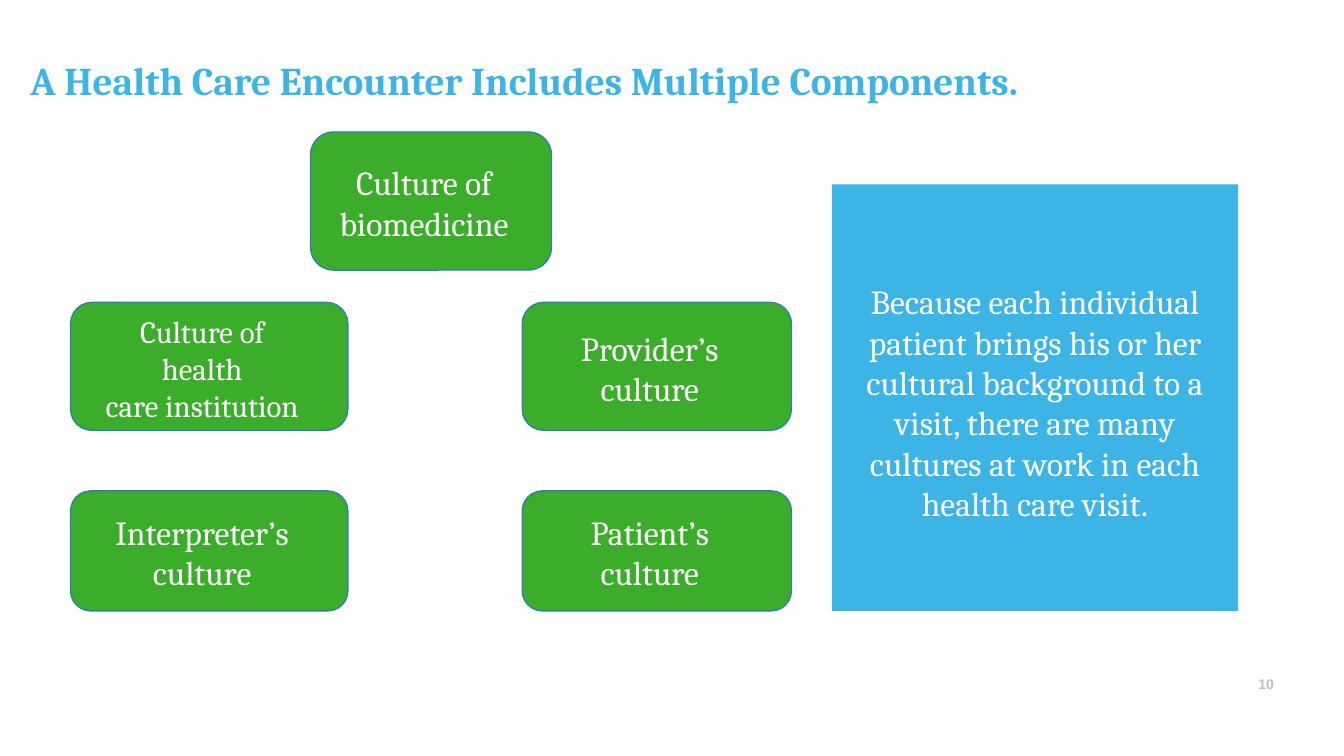
from dataclasses import dataclass

from pptx import Presentation
from pptx.dml.color import RGBColor as RGB
from pptx.enum.shapes import MSO_SHAPE as Shape
from pptx.enum.text import MSO_ANCHOR as Anchor, MSO_AUTO_SIZE as Fit, PP_ALIGN as Align
from pptx.util import Inches, Pt


@dataclass(frozen=True)
class Theme:
    sky: RGB = RGB(0x3C, 0xB5, 0xE6)
    leaf: RGB = RGB(0x3C, 0xAD, 0x2B)
    edge: RGB = RGB(0x2A, 0x84, 0xA9)
    white: RGB = RGB(0xFF, 0xFF, 0xFF)
    gray: RGB = RGB(0xBE, 0xBE, 0xBE)
    serif: str = "Cambria"
    sans: str = "Arial"
    head: int = 28
    body: int = 24
    snug: int = 22
    foot: int = 10
    cell: float = 0.1


class Deck:
    def __init__(self, theme):
        self.theme = theme
        self.show = Presentation()
        self.show.slide_width = Inches(13.33)
        self.show.slide_height = Inches(7.5)
        self.slide = self.show.slides.add_slide(self.show.slide_layouts[5])

    def grid(self, *spans):
        return [Inches(span * self.theme.cell) for span in spans]

    def label(self, shape, text, size, color, pads=(0, 0, 0, 0), align=Align.CENTER,
              anchor=Anchor.MIDDLE, face=None, bold=False):
        frame = shape.text_frame
        frame.text = text
        frame.word_wrap = True
        frame.auto_size = Fit.NONE
        frame.vertical_anchor = anchor
        (frame.margin_left, frame.margin_top,
         frame.margin_right, frame.margin_bottom) = self.grid(*pads)
        for para in frame.paragraphs:
            para.alignment = align
            for run in para.runs:
                run.font.name = face or self.theme.serif
                run.font.size = Pt(size)
                run.font.bold = bold
                run.font.color.rgb = color

    def title(self, text, left, top, width, height):
        shape = self.slide.shapes.title
        shape.left, shape.top, shape.width, shape.height = self.grid(left, top, width, height)
        self.label(shape, text, self.theme.head, self.theme.sky, (0.1, 0.2, 0, 0),
                   Align.LEFT, Anchor.TOP, bold=True)

    def block(self, kind, spot, fill):
        shape = self.slide.shapes.add_shape(kind, *self.grid(*spot))
        shape.shadow.inherit = False
        shape.fill.solid()
        shape.fill.fore_color.rgb = fill
        shape.line.fill.background()
        return shape

    def card(self, text, spot, size):
        shape = self.block(Shape.ROUNDED_RECTANGLE, spot, self.theme.leaf)
        shape.line.color.rgb = self.theme.edge
        shape.line.width = Pt(0.96)
        self.label(shape, text, size, self.theme.white, (2, 0.3, 3.4, 0))

    def panel(self, text, spot):
        shape = self.block(Shape.RECTANGLE, spot, self.theme.sky)
        self.label(shape, text, self.theme.body, self.theme.white, (2.4, 0.9, 2.4, 0))

    def number(self, text, spot):
        shape = self.slide.shapes.add_textbox(*self.grid(*spot))
        self.label(shape, text, self.theme.foot, self.theme.gray, (0.4, 0, 0, 0),
                   Align.LEFT, Anchor.TOP, self.theme.sans, True)


def main():
    theme = Theme()
    deck = Deck(theme)
    deck.title("A Health Care Encounter Includes Multiple Components.", 2.9, 5.4, 114.1, 4.9)
    deck.panel("Because each individual patient brings his or her cultural background to a "
               "visit, there are many cultures at work in each health care visit.",
               (82.5, 18.3, 40.3, 42.3))

    deck.card("Culture of\nbiomedicine", (30.8, 13.1, 23.9, 13.7), theme.body)
    cols = ((7, 27.5), (51.8, 26.7))
    rows = ((30, 12.7), (48.7, 11.9))
    cards = (
        (("Culture of health\ncare institution", theme.snug), ("Provider’s culture", theme.body)),
        (("Interpreter’s culture", theme.body), ("Patient’s culture", theme.body)),
    )
    for (top, height), line in zip(rows, cards):
        for (left, width), (text, size) in zip(cols, line):
            deck.card(text, (left, top, width, height), size)

    deck.number("10", (124.4, 67, 2.5, 1.8))
    deck.show.save("out.pptx")


if __name__ == "__main__":
    main()
